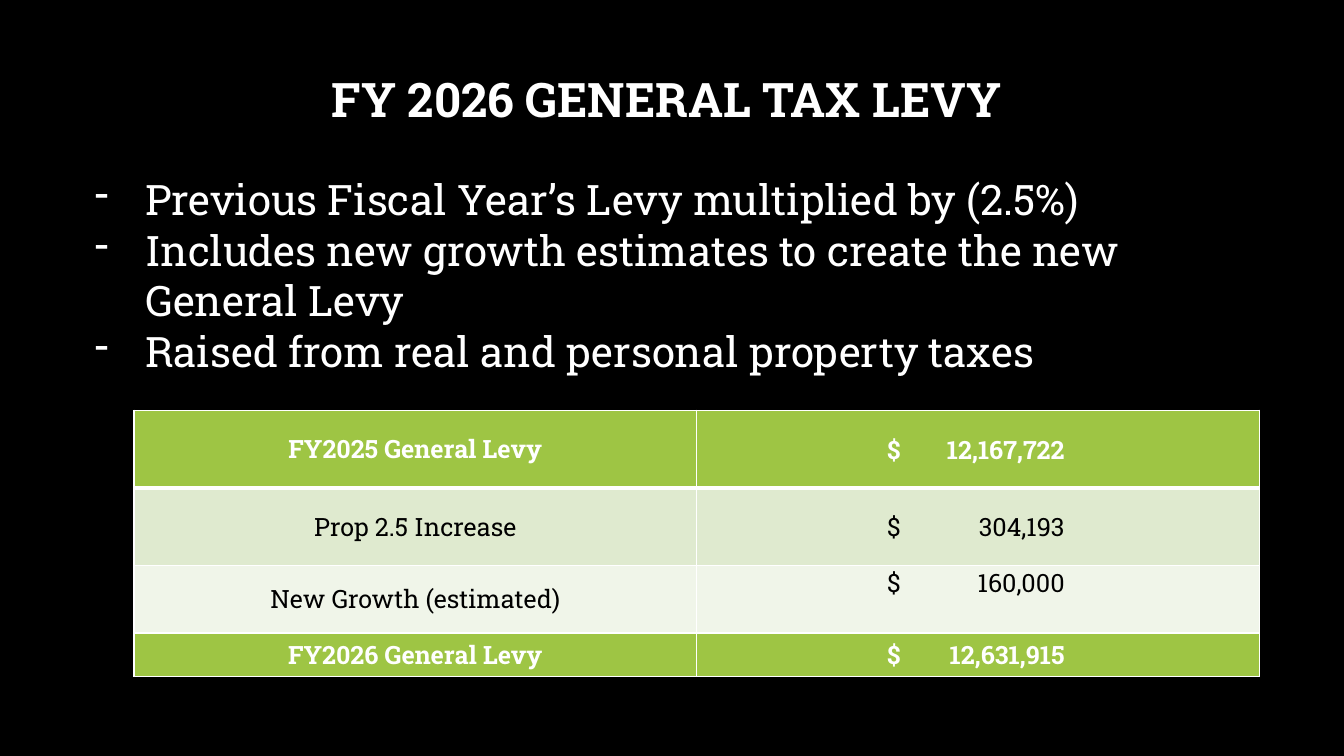
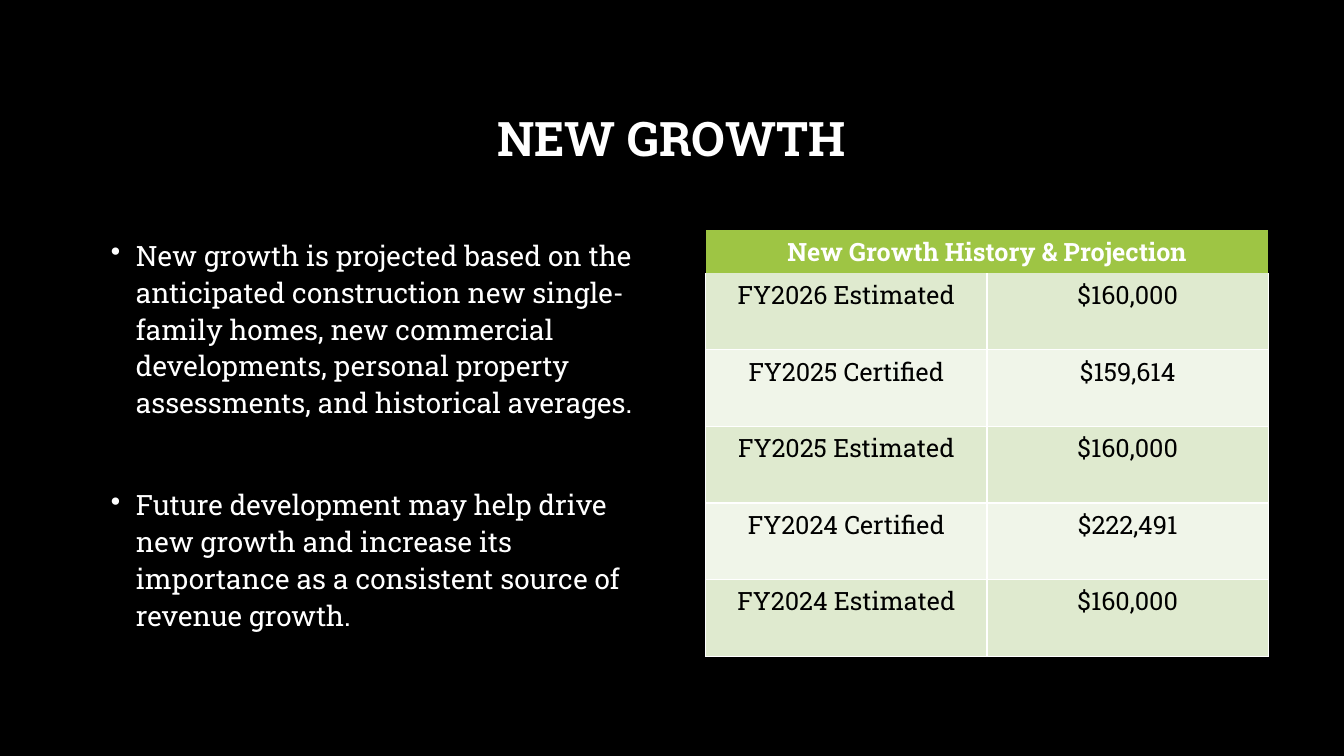
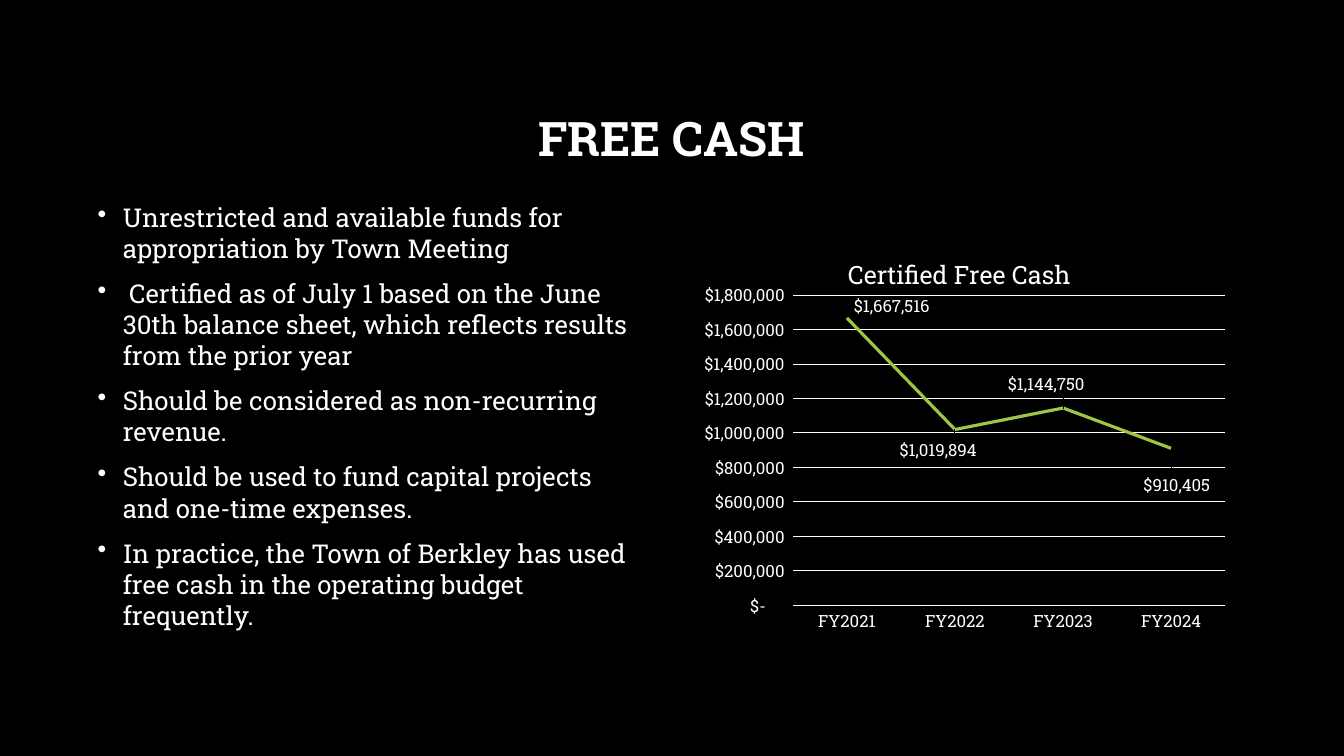
from dataclasses import dataclass
from typing import Optional

import lxml.etree
import pptx
import pptx.chart.chart
import pptx.chart.data
import pptx.dml.color
import pptx.enum.chart
import pptx.enum.text
import pptx.oxml
import pptx.oxml.ns
import pptx.slide
import pptx.table
import pptx.text.text
import pptx.util

EMU_PER_PX = 9144  # 100 px to the inch
ALIGN = pptx.enum.text.PP_ALIGN
ANCHOR = pptx.enum.text.MSO_ANCHOR
qn = pptx.oxml.ns.qn


@dataclass(frozen=True)
class Theme:
    background: str = "000000"
    light: str = "FFFFFF"
    dark: str = "000000"
    accent: str = "9EC544"
    band: str = "DFEACF"
    pale: str = "F0F5E9"
    font: str = "Roboto Slab"
    title: float = 34
    table: float = 18
    chart_title: float = 18
    chart: float = 12


THEME = Theme()


@dataclass(frozen=True)
class Box:
    left: int
    top: int
    width: int
    height: int

    def emu(self) -> tuple[pptx.util.Emu, ...]:
        return tuple(px(v) for v in (self.left, self.top, self.width, self.height))


@dataclass(frozen=True)
class BulletStyle:
    mark: str
    indent: int
    size: float
    line: float
    gap: float = 0


@dataclass(frozen=True)
class Row:
    cells: tuple[str, ...]
    height: int
    fill: str
    strong: bool = False
    anchor: ANCHOR = ANCHOR.MIDDLE
    # Border widths in points; zero means no border
    sides: float = 1
    above: float = 1
    below: float = 1


@dataclass(frozen=True)
class Amounts:
    """Where the dollar sign and the right edge of the figures stand in a cell."""
    sign: int
    figure: int


@dataclass(frozen=True)
class YearCash:
    year: str
    value: int
    label_dx: int
    label_dy: int


def px(value: int) -> pptx.util.Emu:
    return pptx.util.Emu(value * EMU_PER_PX)


def rgb(color: str) -> pptx.dml.color.RGBColor:
    return pptx.dml.color.RGBColor.from_string(color)


def style_font(font: pptx.text.text.Font, size: float, color: str, bold: bool = False) -> None:
    font.name = THEME.font
    font.size = pptx.util.Pt(size)
    font.bold = bold
    font.color.rgb = rgb(color)


def style_runs(paragraph: pptx.text.text._Paragraph, size: float, color: str,
               bold: bool = False) -> None:
    for run in paragraph.runs:
        style_font(run.font, size, color, bold)


def add_text_frame(slide: pptx.slide.Slide, box: Box) -> pptx.text.text.TextFrame:
    frame = slide.shapes.add_textbox(*box.emu()).text_frame
    frame.word_wrap = True
    return frame


def add_titled_slide(deck: pptx.presentation.Presentation, title: str,
                     box: Box) -> pptx.slide.Slide:
    slide = deck.slides.add_slide(deck.slide_layouts[6])
    frame = add_text_frame(slide, box)
    frame.vertical_anchor = ANCHOR.MIDDLE
    frame.text = title
    heading = frame.paragraphs[0]
    heading.alignment = ALIGN.CENTER
    heading.line_spacing = 0.9
    style_runs(heading, THEME.title, THEME.light, bold=True)
    return slide


def add_bullets(slide: pptx.slide.Slide, box: Box, points: tuple[str, ...],
                style: BulletStyle) -> None:
    frame = add_text_frame(slide, box)
    frame.text = "\n".join(points)
    for index, point in enumerate(frame.paragraphs):
        point.line_spacing = pptx.util.Pt(style.line)
        point.space_before = pptx.util.Pt(style.gap if index else 0)
        style_runs(point, style.size, THEME.light)
        properties = point._p.get_or_add_pPr()
        properties.set("marL", str(px(style.indent)))
        properties.set("indent", str(-px(style.indent)))
        lxml.etree.SubElement(properties, qn("a:buChar")).set("char", style.mark)


def set_borders(cell: pptx.table._Cell, row: Row) -> None:
    """Put the four border lines ahead of the cell's fill."""
    edges = (("L", row.sides), ("R", row.sides), ("T", row.above), ("B", row.below))
    properties = cell._tc.get_or_add_tcPr()
    for place, (edge, width) in enumerate(edges):
        line = lxml.etree.Element(qn(f"a:ln{edge}"))
        line.set("w", str(pptx.util.Pt(width)))
        if width:
            paint = lxml.etree.SubElement(line, qn("a:solidFill"))
            lxml.etree.SubElement(paint, qn("a:srgbClr")).set("val", THEME.light)
        else:
            lxml.etree.SubElement(line, qn("a:noFill"))
        properties.insert(place, line)


def align_amount(cell: pptx.table._Cell, amounts: Amounts) -> None:
    cell.margin_left = px(amounts.sign)
    cell.margin_right = cell.margin_top = px(1)
    cell.margin_bottom = px(0)
    paragraph = cell.text_frame.paragraphs[0]
    paragraph.alignment = ALIGN.LEFT
    stops = lxml.etree.SubElement(paragraph._p.get_or_add_pPr(), qn("a:tabLst"))
    stop = lxml.etree.SubElement(stops, qn("a:tab"))
    stop.set("pos", str(px(amounts.figure - amounts.sign)))
    stop.set("algn", "r")


def add_table(slide: pptx.slide.Slide, left: int, top: int, column: int,
              rows: tuple[Row, ...], amounts: Optional[Amounts] = None) -> None:
    box = Box(left, top, 2 * column, sum(row.height for row in rows))
    table = slide.shapes.add_table(len(rows), 2, *box.emu()).table
    table.first_row = table.horz_banding = False
    for table_column in table.columns:
        table_column.width = px(column)
    for number, row in enumerate(rows):
        table.rows[number].height = px(row.height)
        if len(row.cells) == 1:
            table.cell(number, 0).merge(table.cell(number, 1))
        for cell in table.rows[number].cells:
            cell.fill.solid()
            cell.fill.fore_color.rgb = rgb(row.fill)
            set_borders(cell, row)
        for position, words in enumerate(row.cells):
            cell = table.cell(number, position)
            cell.vertical_anchor = row.anchor
            cell.text_frame.text = words
            paragraph = cell.text_frame.paragraphs[0]
            paragraph.alignment = ALIGN.CENTER
            style_runs(paragraph, THEME.table, THEME.light if row.strong else THEME.dark,
                       row.strong)
            if "\t" in words and amounts:
                align_amount(cell, amounts)
    # The amount in a top-anchored row sits apart from its centred label
    if amounts:
        for number, row in enumerate(rows):
            table.cell(number, 0).vertical_anchor = ANCHOR.MIDDLE


def manual_layout(**settings: object) -> lxml.etree._Element:
    layout = lxml.etree.Element(qn("c:layout"))
    manual = lxml.etree.SubElement(layout, qn("c:manualLayout"))
    for name, value in settings.items():
        lxml.etree.SubElement(manual, qn(f"c:{name}")).set("val", str(value))
    return layout


def style_axes(chart: pptx.chart.chart.Chart, money: str) -> None:
    years, dollars = chart.category_axis, chart.value_axis
    for axis in (years, dollars):
        axis.major_tick_mark = axis.minor_tick_mark = pptx.enum.chart.XL_TICK_MARK.NONE
        style_font(axis.tick_labels.font, THEME.chart, THEME.light)
    dollars.minimum_scale, dollars.maximum_scale = 0, 1_800_000
    dollars.major_unit = 200_000
    dollars.has_major_gridlines = True
    dollars.tick_labels.number_format = money
    dollars.tick_labels.number_format_is_linked = False
    dollars.format.line.fill.background()
    for line in (years.format.line, dollars.major_gridlines.format.line):
        line.color.rgb = rgb(THEME.light)
        line.width = pptx.util.Pt(0.75)


def add_cash_chart(slide: pptx.slide.Slide, box: Box, title: str,
                   history: tuple[YearCash, ...]) -> None:
    money = '_("$"* #,##0_);_("$"* \\(#,##0\\);_("$"* "-"??_);_(@_)'
    data = pptx.chart.data.CategoryChartData(number_format=money)
    data.categories = [entry.year for entry in history]
    data.add_series("Series 1", [entry.value for entry in history])
    chart = slide.shapes.add_chart(pptx.enum.chart.XL_CHART_TYPE.LINE, *box.emu(), data).chart
    style_font(chart.font, THEME.chart, THEME.light)
    chart.has_legend = False

    # Title and plot area
    chart.has_title = True
    chart.chart_title.text_frame.text = title
    style_runs(chart.chart_title.text_frame.paragraphs[0], THEME.chart_title, THEME.light)
    chart.chart_title.include_in_layout = False
    heading = chart.chart_title._element
    for old in heading.findall(qn("c:layout")):
        heading.remove(old)
    heading.find(qn("c:tx")).addnext(
        manual_layout(xMode="edge", yMode="edge", x=0.29, y=0.05))
    plot_area = chart._chartSpace.chart.plotArea
    for old in plot_area.findall(qn("c:layout")):
        plot_area.remove(old)
    plot_area.insert(0, manual_layout(layoutTarget="inner", xMode="edge", yMode="edge",
                                      x=0.2, y=0.16, w=0.77, h=0.76))
    style_axes(chart, money)

    # Line and its labels
    chart.plots[0].vary_by_categories = False
    cash = chart.plots[0].series[0]
    cash.smooth = False
    cash.marker.style = pptx.enum.chart.XL_MARKER_STYLE.NONE
    cash.format.line.color.rgb = rgb(THEME.accent)
    cash.format.line.width = pptx.util.Pt(2.25)
    labels = cash.data_labels
    labels.show_value = True
    labels.number_format = money
    labels.number_format_is_linked = False
    labels.position = pptx.enum.chart.XL_LABEL_POSITION.CENTER
    style_font(labels.font, THEME.chart, THEME.light)
    for index, entry in enumerate(history):
        label = cash.points[index].data_label
        style_font(label.font, THEME.chart, THEME.light)
        label.position = pptx.enum.chart.XL_LABEL_POSITION.CENTER
        offset = manual_layout(x=round(entry.label_dx / box.width, 2),
                               y=round(entry.label_dy / box.height, 2))
        label._dLbl.find(qn("c:idx")).addnext(offset)


def add_levy_slide(deck: pptx.presentation.Presentation) -> None:
    slide = add_titled_slide(deck, "FY 2026 GENERAL TAX LEVY ", Box(101, 29, 1132, 145))
    add_bullets(slide, Box(84, 167, 1183, 212), (
        "Previous Fiscal Year’s Levy multiplied by (2.5%)",
        "Includes new growth estimates to create the new General Levy",
        "Raised from real and personal property taxes",
    ), BulletStyle("-", 50, size=30, line=36.2))
    add_table(slide, 133, 407, 558, (
        Row(("FY2025 General Levy", "$\t12,167,722"), 77, THEME.accent, True, below=3),
        Row(("Prop 2.5 Increase", "$\t304,193"), 77, THEME.band, above=3),
        Row(("New Growth (estimated)", "$\t160,000"), 67, THEME.pale, anchor=ANCHOR.TOP),
        Row(("FY2026 General Levy", "$\t12,631,915"), 43, THEME.accent, True),
    ), Amounts(sign=189, figure=365))


def add_growth_slide(deck: pptx.presentation.Presentation) -> None:
    slide = add_titled_slide(deck, "NEW GROWTH", Box(100, 67, 1132, 145))
    add_bullets(slide, Box(100, 228, 558, 405), (
        "New growth is projected based on the anticipated construction new single- family "
        "homes, new commercial developments, personal property assessments, and historical "
        "averages.",
        "Future development may help drive new growth and increase its importance as a "
        "consistent source of revenue growth.",
    ), BulletStyle("•", 25, size=20, line=26.4, gap=46.4))
    history = (
        ("FY2026 Estimated", "$160,000"),
        ("FY2025 Certified", "$159,614"),
        ("FY2025 Estimated", "$160,000"),
        ("FY2024 Certified", "$222,491"),
        ("FY2024 Estimated", "$160,000"),
    )
    header = Row(("New Growth History & Projection",), 43, THEME.accent, True,
                 anchor=ANCHOR.TOP, sides=0, above=0, below=0)
    years = tuple(
        Row(cells, 76, THEME.pale if index % 2 else THEME.band,
            anchor=ANCHOR.TOP, above=1 if index else 0)
        for index, cells in enumerate(history))
    add_table(slide, 700, 228, 279, (header, *years))


def add_cash_slide(deck: pptx.presentation.Presentation) -> None:
    slide = add_titled_slide(deck, "FREE CASH", Box(100, 67, 1132, 145))
    add_bullets(slide, Box(87, 195, 557, 451), (
        "Unrestricted and available funds for appropriation by Town Meeting",
        " Certified as of July 1 based on the June 30th balance sheet, which reflects "
        "results from the prior year",
        "Should be considered as non-recurring revenue.",
        "Should be used to fund capital projects and one-time expenses.",
        "In practice, the Town of Berkley has used free cash in the operating budget "
        "frequently.",
    ), BulletStyle("•", 25, size=18.5, line=22.2, gap=10))
    add_cash_chart(slide, Box(675, 228, 557, 405), "Certified Free Cash", (
        YearCash("FY2021", 1667516, 46, -11),
        YearCash("FY2022", 1019894, -17, 21),
        YearCash("FY2023", 1144750, -16, -23),
        YearCash("FY2024", 910405, 5, 35),
    ))


def main() -> None:
    deck = pptx.Presentation()
    deck.slide_width, deck.slide_height = px(1333), px(750)
    backdrop = deck.slide_master.background.fill
    backdrop.solid()
    backdrop.fore_color.rgb = rgb(THEME.background)
    add_levy_slide(deck)
    add_growth_slide(deck)
    add_cash_slide(deck)
    deck.save("out.pptx")


if __name__ == "__main__":
    main()
